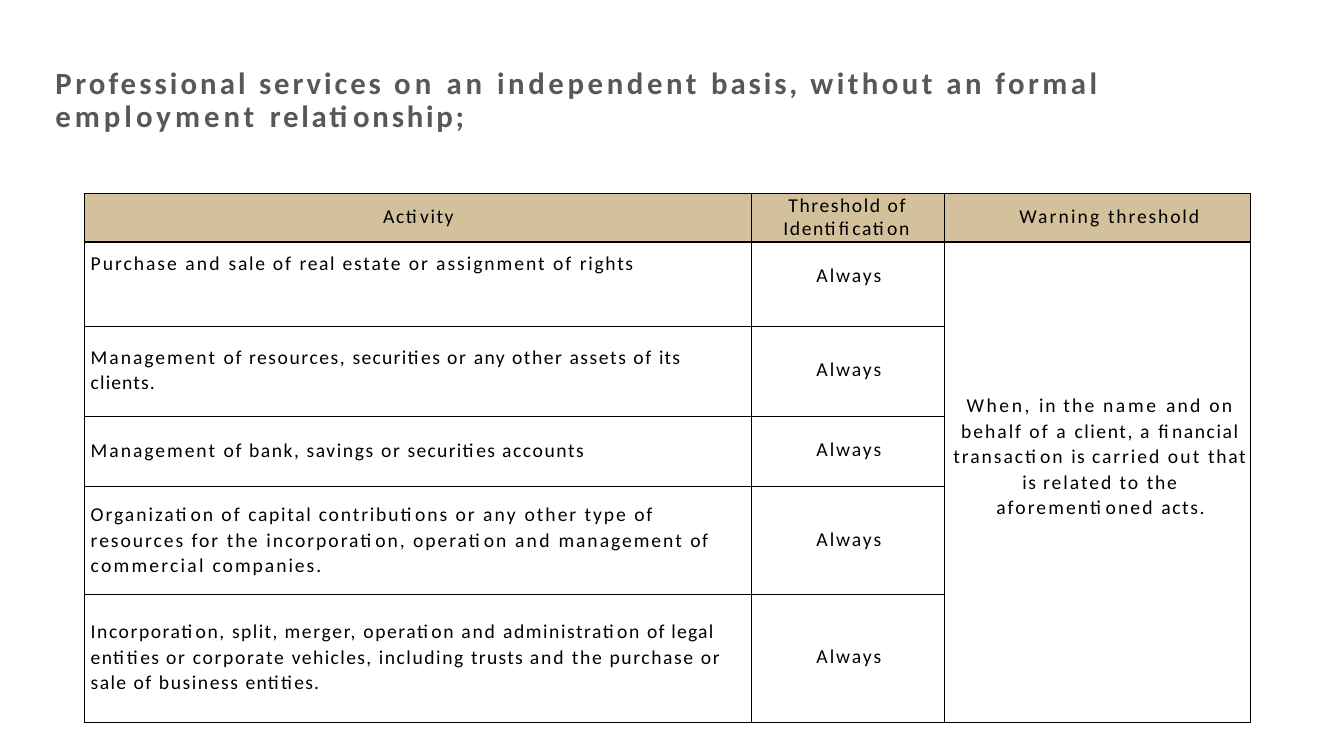
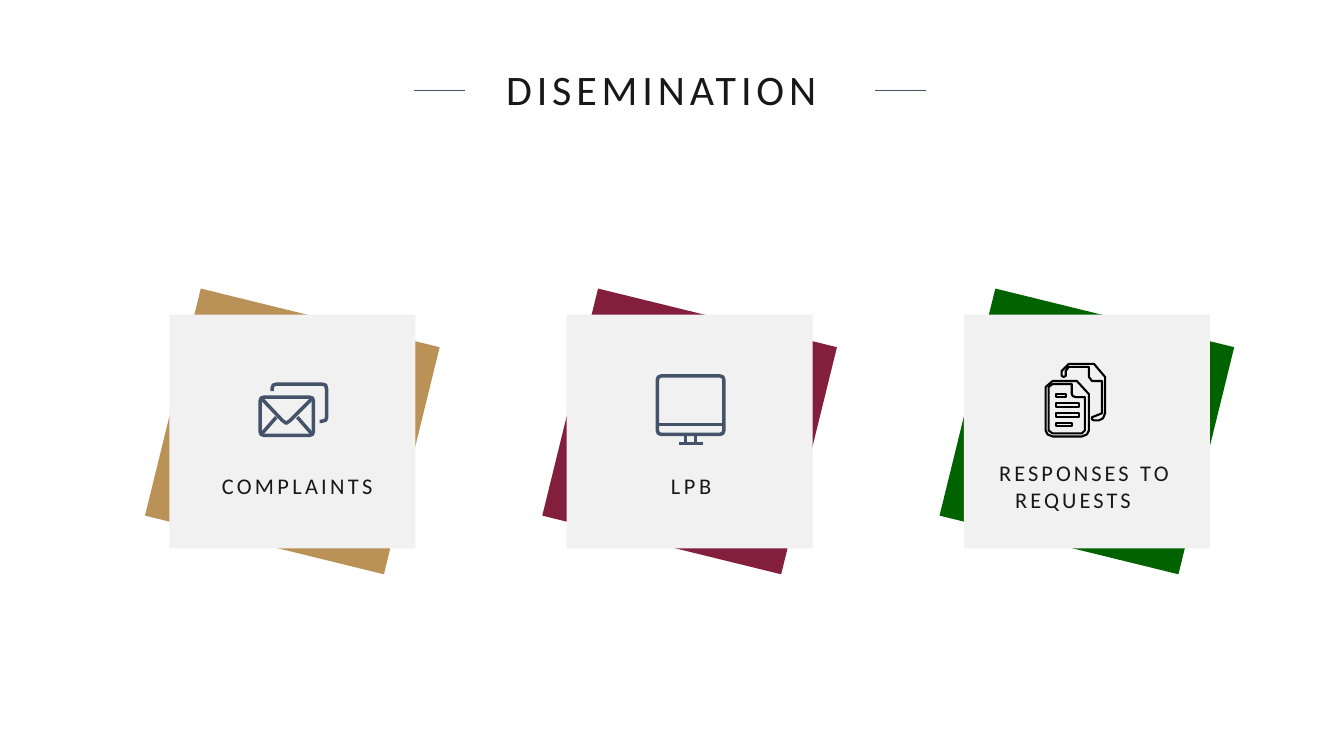
"""Build two slides: a table of service thresholds and three dissemination cards."""
from lxml.etree import SubElement
from pptx import Presentation
from pptx.dml.color import RGBColor
from pptx.enum.shapes import MSO_CONNECTOR as CONNECTOR, MSO_SHAPE as SHAPE
from pptx.enum.text import MSO_ANCHOR as ANCHOR, MSO_AUTO_SIZE as AUTO_SIZE, PP_ALIGN as ALIGN
from pptx.oxml.ns import qn
from pptx.util import Inches, Pt

FONT = "Calibri"
BLACK = RGBColor(0x00, 0x00, 0x00)
INK = RGBColor(0x18, 0x18, 0x18)
GRAY = RGBColor(0x58, 0x58, 0x58)
SLATE = RGBColor(0x44, 0x53, 0x6A)
PANEL = RGBColor(0xF1, 0xF1, 0xF1)
SAND = RGBColor(0xD3, 0xC1, 0x9C)
GOLD = RGBColor(0xBA, 0x91, 0x56)
WINE = RGBColor(0x84, 0x1E, 0x3D)
GREEN = RGBColor(0x00, 0x63, 0x00)

CARD_LEFT, CARD_TOP, CARD_PITCH = 1.68, 3.12, 3.94
CARD_WIDTH, CARD_HEIGHT, CARD_TILT = 2.44, 2.32, 13.8

COLUMN_WIDTHS = [6.61, 1.92, 3.03]
ROW_HEIGHTS = [0.48, 0.84, 0.89, 0.70, 1.07, 1.27]
BOTTOM_MARGINS = [(0.42, 0.16), (0.04, 0.04), (0.04, 0.04), (0.02, 0.02), (0.04, 0.04)]

SERVICES_TITLE = [
    ("P", 2.5), ("rofessional ", 2.2), ("services ", 2.1), ("on ", 3), ("an ", 2.8),
    ("independent ", 2.6), ("basis, ", 2.1), ("without an formal ", 2.5),
    ("employment ", 2.9), ("relationship;", 2)]
ACTIVITIES = [
    [("Purchase ", 1.4), ("and ", 1.6), ("sale ", 1.2), ("of ", 1.4), ("real ", 1.2),
     ("estate ", 1.3), ("or assignment of ", 1.4), ("rights", 1.2)],
    [("Management ", 1.4), ("of resources, ", 1.1), ("securities ", 0.9), ("or ", 1.2),
     ("any ", 1), ("other assets of ", 1.1), ("its clients.", 0.8)],
    [("Management ", 1.4), ("of bank, savings ", 1.1), ("or ", 1.2), ("securities ", 0.9),
     ("accounts", 1.1)],
    [("Organization of ", 1.4), ("capital ", 1.2), ("contributions ", 1.3), ("or ", 1.4),
     ("any ", 1.6), ("other type ", 1.4), ("of ", 1.1), ("resources for ", 1.4), ("the ", 1.5),
     ("incorporation, operation ", 1.4), ("and ", 1.6), ("management ", 1.4), ("of ", 1.1),
     ("commercial ", 1.6), ("companies.", 1.4)],
    [("Incorporation, ", 1.1), ("split", 1), (", ", 0.9), ("merger, ", 1.2),
     ("operation ", 1.1), ("and ", 1.3), ("administration ", 1.1), ("of ", 0.8),
     ("legal entities ", 0.9), ("or corporate ", 1.2), ("vehicles, ", 1), ("including ", 1.1),
     ("trusts ", 0.9), ("and ", 1.3), ("the ", 1.2), ("purchase ", 1.1), ("or ", 1.2),
     ("sale ", 1), ("of business ", 1.1), ("entities.", 0.8)],
]
WARNING = [
    ("When, ", 1.8), ("in ", 1.2), ("the ", 1.5), ("name ", 1.9), ("and ", 1.6), ("on ", 1.5),
    ("behalf of ", 1.4), ("a ", 1.6), ("client, ", 1.1), ("a ", 1.6), ("financial ", 1.1),
    ("transaction ", 1.4), ("is ", 1), ("carried ", 1.4), ("out ", 1.5), ("that ", 1.2),
    ("is ", 1), ("related to ", 1.4), ("the ", 1.2), ("aforementioned ", 1.5), ("acts.", 1.1)]


def rounded(left, top, right, bottom, cut):
    """Return the closed outline of a box with softened corners."""
    near = round(cut * 0.3)
    return [(left + cut, top), (right - cut, top), (right - near, top + near),
            (right, top + cut), (right, bottom - cut), (right - near, bottom - near),
            (right - cut, bottom), (left + cut, bottom), (left + near, bottom - near),
            (left, bottom - cut), (left, top + cut), (left + near, top + near),
            (left + cut, top)]


ENVELOPE_ICON = [
    rounded(90, 82, 143, 120, 4),
    [(92, 84), (112, 105), (116, 108), (120, 105), (141, 84)],
    [(92, 118), (106, 102)],
    [(141, 118), (127, 102)],
    [(102, 76), (102, 73), (103, 70), (107, 69), (151, 69), (155, 70), (156, 74), (156, 102),
     (155, 105), (151, 106), (149, 106)],
]
MONITOR_ICON = [
    rounded(90, 61, 156, 119, 4),
    [(90, 109), (156, 109)],
    [(118, 119), (118, 128)],
    [(128, 119), (128, 128)],
    [(111, 128), (135, 128)],
]
DOCUMENT_ICON = [
    [(88, 66), (112, 66), (124, 79), (124, 115), (122, 119), (117, 121), (88, 121), (83, 119),
     (81, 115), (81, 72), (88, 66)],
    [(88, 69), (107, 69), (107, 79), (108, 81), (111, 82), (120, 82), (120, 115), (117, 118),
     (88, 118), (84, 115), (84, 72), (88, 69)],
    [(129, 49), (104, 49), (97, 56), (97, 61), (99, 62), (101, 61), (101, 56), (104, 52),
     (124, 52), (124, 62), (127, 66), (137, 66), (137, 98), (127, 102), (127, 104), (129, 105),
     (134, 105), (138, 103), (140, 98), (140, 62), (129, 49)],
    rounded(91, 79, 101, 82, 1),
    rounded(91, 88, 114, 92, 1),
    rounded(91, 98, 114, 102, 1),
    rounded(91, 108, 107, 111, 1),
]
CARDS = [
    ([("COMPLAINTS", 2.4)], GOLD, ENVELOPE_ICON, SLATE, 2.5, dict(indent=(0.52, 0))),
    ([("LPB", 2.6)], WINE, MONITOR_ICON, SLATE, 2.5,
     dict(align=ALIGN.CENTER, indent=(0.03, 0))),
    ([("RESPONSES ", 2.2), ("TO ", 2.4), ("REQUESTS", 2.2)], GREEN, DOCUMENT_ICON, BLACK, 1.5,
     dict(indent=(0.51, -0.16))),
]


def set_attributes(target, values):
    """Set each named attribute of an object."""
    for name, value in values.items():
        setattr(target, name, value)


def write(frame, pieces, size, color, align=ALIGN.LEFT, indent=(0, 0), line_spacing=None,
          bold=False):
    """Write one paragraph from pieces of text with their letter spacing."""
    paragraph = frame.paragraphs[0]
    set_attributes(paragraph, dict(alignment=align, line_spacing=line_spacing))
    properties = paragraph._p.get_or_add_pPr()
    for name, length in zip(("marL", "indent"), indent):
        properties.set(name, str(Inches(length)))
    for text, spacing in pieces:
        run = paragraph.add_run()
        run.text = text
        set_attributes(run.font, dict(name=FONT, size=Pt(size), bold=bold))
        run.font.color.rgb = color
        run._r.get_or_add_rPr().set("spc", str(round(spacing * 100)))


def set_margins(target, left=0, top=0, right=0, bottom=0):
    """Set the inner margins of a text frame or table cell."""
    set_attributes(target, dict(margin_left=Inches(left), margin_top=Inches(top),
                                margin_right=Inches(right), margin_bottom=Inches(bottom)))


def add_titled_slide(presentation, pieces, height, top_margin, **text_format):
    """Add a title-only slide and format its title."""
    slide = presentation.slides.add_slide(presentation.slide_layouts[5])
    title = slide.shapes.title
    set_attributes(title, dict(left=Inches(0.54), top=Inches(0.62),
                               width=Inches(12.26), height=Inches(height)))
    frame = title.text_frame
    set_attributes(frame, dict(word_wrap=True, auto_size=AUTO_SIZE.NONE,
                               vertical_anchor=ANCHOR.TOP))
    set_margins(frame, top=top_margin)
    write(frame, pieces, **text_format)
    return slide


def add_borders(cell):
    """Give a table cell a thin black border on all sides."""
    properties = cell._tc.get_or_add_tcPr()
    for side in ("a:lnL", "a:lnR", "a:lnT", "a:lnB"):
        line = SubElement(properties, qn(side), w=str(Pt(1)))
        fill = SubElement(line, qn("a:solidFill"))
        SubElement(fill, qn("a:srgbClr"), val=str(BLACK))


def fill_cell(cell, pieces, right=0, bottom=0.02, **text_format):
    """Write text into a table cell and set its margins."""
    set_margins(cell, right=right, bottom=bottom)
    cell.vertical_anchor = ANCHOR.MIDDLE
    write(cell.text_frame, pieces, 14, BLACK, **text_format)


def add_threshold_table(slide):
    """Add the table of activities and thresholds."""
    table = slide.shapes.add_table(
        len(ROW_HEIGHTS), len(COLUMN_WIDTHS), Inches(0.84), Inches(1.92),
        Inches(sum(COLUMN_WIDTHS)), Inches(sum(ROW_HEIGHTS))).table
    set_attributes(table, dict(first_row=False, horz_banding=False))
    for column, width in zip(table.columns, COLUMN_WIDTHS):
        column.width = Inches(width)
    for row, height in zip(table.rows, ROW_HEIGHTS):
        row.height = Inches(height)
        for cell in row.cells:
            add_borders(cell)
            cell.fill.background()
    for cell in table.rows[0].cells:
        cell.fill.solid()
        cell.fill.fore_color.rgb = SAND
    fill_cell(table.cell(0, 0), [("Activity", 1.1)], align=ALIGN.CENTER, indent=(0.01, 0))
    fill_cell(table.cell(0, 1), [("Threshold of Identification", 1.1)], bottom=0,
              indent=(0.32, 0.05), line_spacing=Pt(16.5))
    fill_cell(table.cell(0, 2), [("Warning ", 1.5), ("threshold", 1.3)], indent=(0.74, 0))
    for row, (activity, bottoms) in enumerate(zip(ACTIVITIES, BOTTOM_MARGINS), start=1):
        fill_cell(table.cell(row, 0), activity, right=0.25, bottom=bottoms[0],
                  indent=(0.06, 0), line_spacing=1.07)
        fill_cell(table.cell(row, 1), [("Always", 1.4)], bottom=bottoms[1],
                  align=ALIGN.CENTER, indent=(0.02, 0))
    table.cell(1, 2).merge(table.cell(len(ACTIVITIES), 2))
    fill_cell(table.cell(1, 2), WARNING, bottom=0.52, align=ALIGN.CENTER,
              indent=(0.06, 0), line_spacing=1.07)


def add_panel(slide, left, color, rotation=0):
    """Add a plain card-sized rectangle."""
    panel = slide.shapes.add_shape(SHAPE.RECTANGLE, Inches(left), Inches(CARD_TOP),
                                   Inches(CARD_WIDTH), Inches(CARD_HEIGHT))
    panel.rotation = rotation
    panel.shadow.inherit = False
    panel.fill.solid()
    panel.fill.fore_color.rgb = color
    panel.line.fill.background()
    return panel


def add_icon(slide, left, strokes, color, width):
    """Draw line strokes, in hundredths of an inch from the card's corner."""
    builder = slide.shapes.build_freeform(*strokes[0][0], scale=Inches(0.01))
    for points in strokes:
        builder.move_to(*points[0])
        builder.add_line_segments(points[1:], close=points[0] == points[-1])
    icon = builder.convert_to_shape(Inches(left), Inches(CARD_TOP))
    icon.shadow.inherit = False
    icon.fill.background()
    icon.line.color.rgb = color
    icon.line.width = Pt(width)


def add_card(slide, left, label, accent, strokes, icon_color, icon_width, text_format):
    """Add a labelled card with a tilted accent behind it and an icon."""
    add_panel(slide, left, accent, CARD_TILT)
    frame = add_panel(slide, left, PANEL).text_frame
    set_attributes(frame, dict(word_wrap=True, vertical_anchor=ANCHOR.MIDDLE))
    set_margins(frame, top=1.08)
    write(frame, label, 16, INK, **text_format)
    add_icon(slide, left, strokes, icon_color, icon_width)


def add_title_dash(slide, left):
    """Add a short line beside the title."""
    dash = slide.shapes.add_connector(CONNECTOR.STRAIGHT, Inches(left), Inches(0.9),
                                      Inches(left + 0.5), Inches(0.9))
    dash.line.color.rgb = SLATE
    dash.line.width = Pt(1)
    SubElement(dash._element.spPr, qn("a:effectLst"))


def main():
    """Build and save the presentation."""
    presentation = Presentation()
    set_attributes(presentation, dict(slide_width=Inches(13.33), slide_height=Inches(7.5)))

    services = add_titled_slide(presentation, SERVICES_TITLE, 0.73, 0.05, size=22, color=GRAY,
                                indent=(0.01, 0), line_spacing=Pt(23.6), bold=True)
    add_threshold_table(services)

    dissemination = add_titled_slide(presentation, [("DISEMINATION", 3.5)], 1.04, 0.01,
                                     size=30, color=INK, indent=(4.48, 0))
    for index, card in enumerate(CARDS):
        add_card(dissemination, CARD_LEFT + index * CARD_PITCH, *card)
    for left in (4.11, 8.68):
        add_title_dash(dissemination, left)

    presentation.save("out.pptx")


if __name__ == "__main__":
    main()
